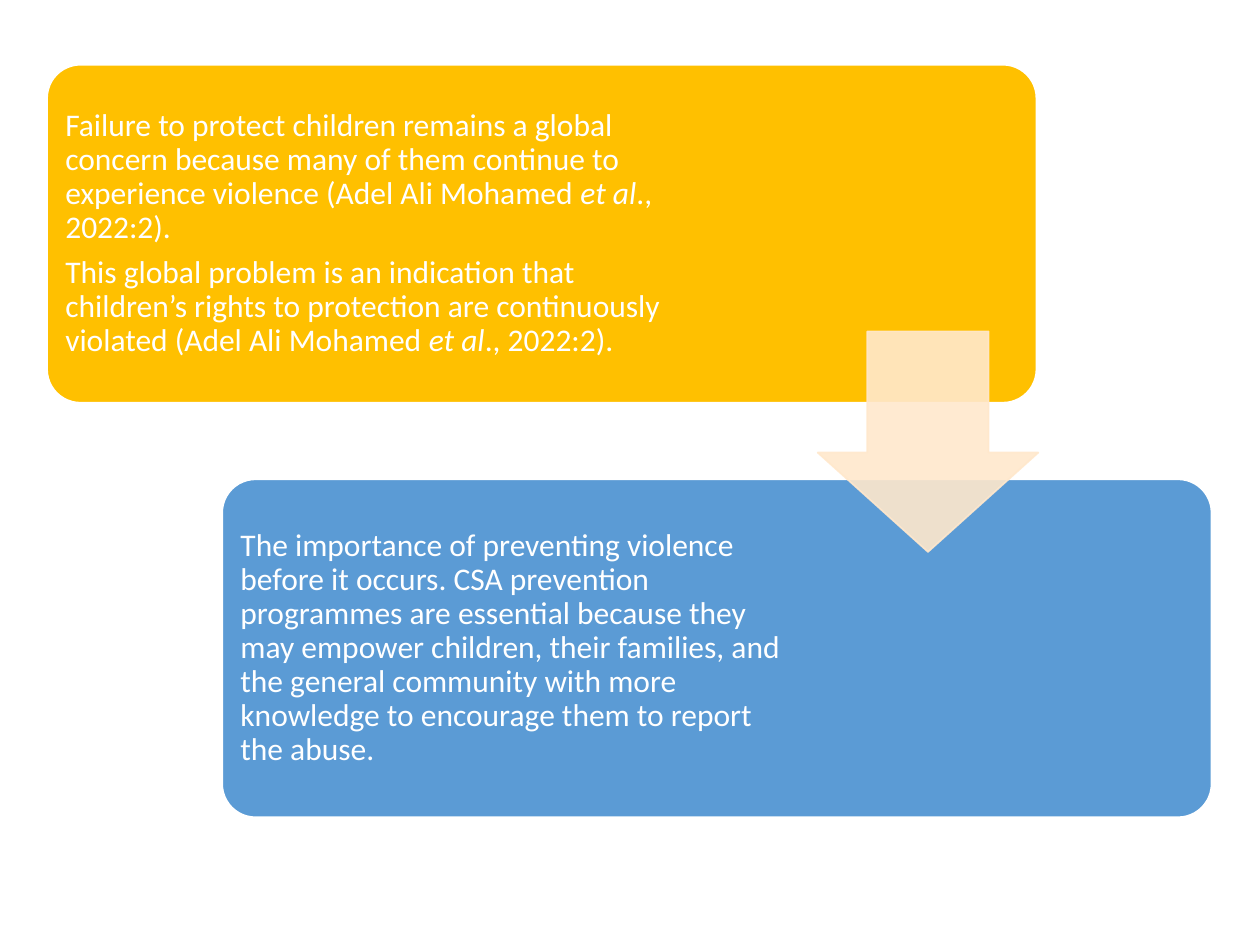
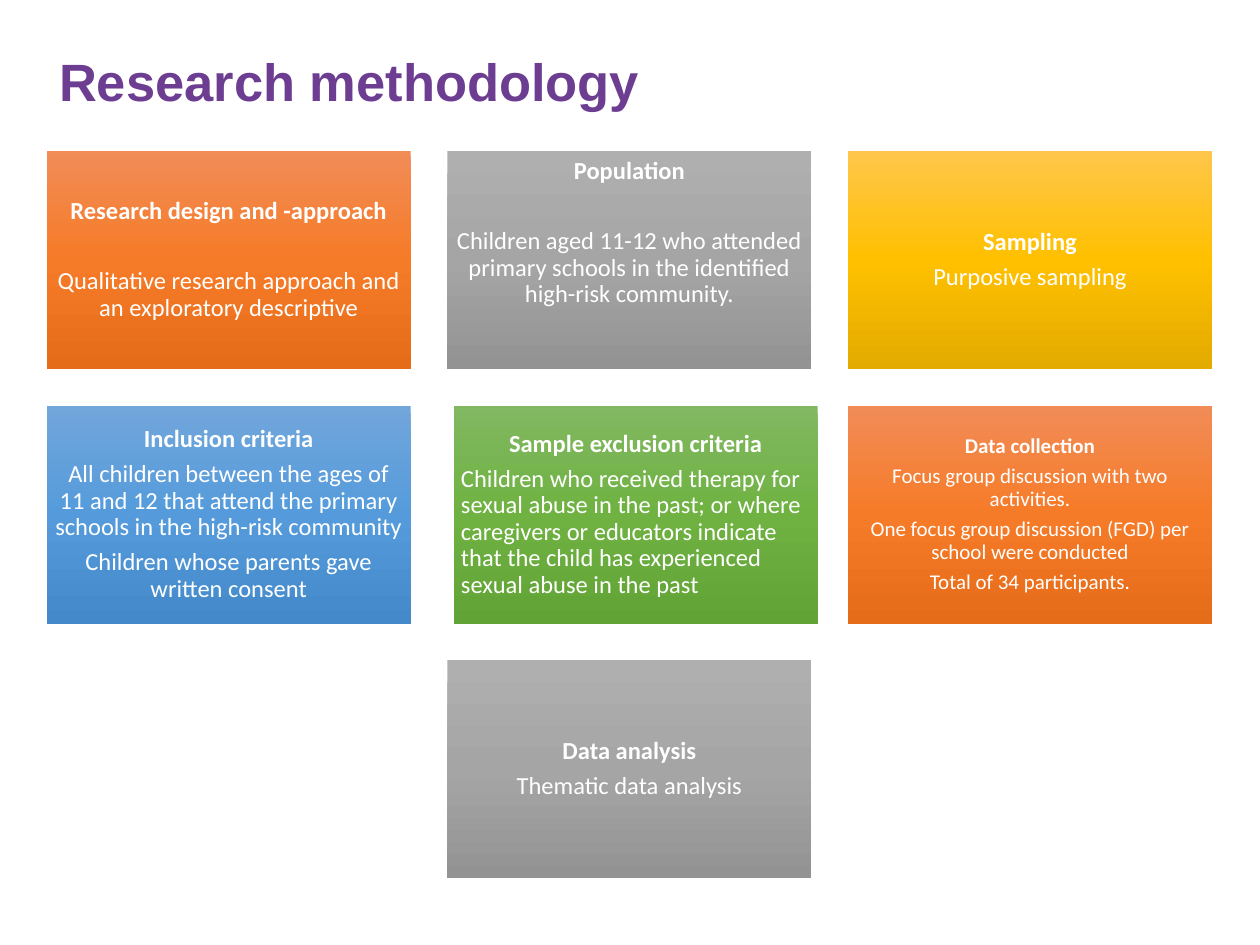
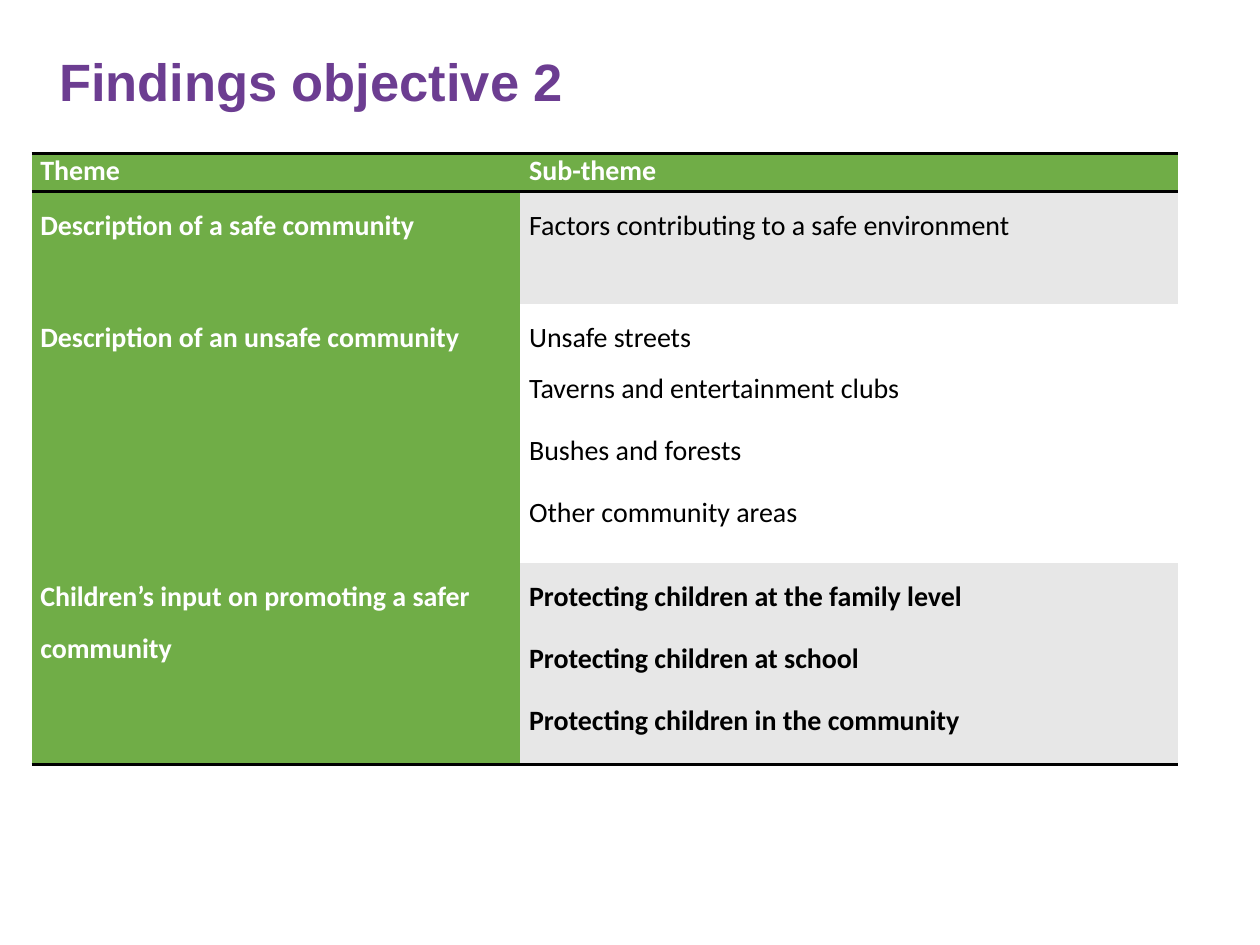
"""Build three slides on child protection research."""
from copy import deepcopy

from pptx import Presentation
from pptx.dml.color import RGBColor
from pptx.enum.shapes import MSO_SHAPE as Kind
from pptx.enum.text import MSO_ANCHOR as Anchor, PP_ALIGN as Align
from pptx.oxml.ns import qn
from pptx.oxml.xmlchemy import OxmlElement as Node
from pptx.util import Inches, Pt

WHITE = RGBColor(0xFF, 0xFF, 0xFF)
BLACK = RGBColor(0, 0, 0)
PURPLE = RGBColor(0x6C, 0x3D, 0x91)
GOLD = RGBColor(0xFF, 0xC0, 0x00)
BLUE = RGBColor(0x5B, 0x9B, 0xD5)
CREAM = RGBColor(0xFF, 0xE8, 0xCC)
GREEN = RGBColor(0x70, 0xAD, 0x47)
PALE = RGBColor(0xE7, 0xE7, 0xE7)

ORANGES = (RGBColor(0xF1, 0x8C, 0x57), RGBColor(0xF6, 0x7B, 0x28), RGBColor(0xE5, 0x6C, 0x19))
GREYS = (RGBColor(0xAF, 0xAF, 0xAF), RGBColor(0xA5, 0xA5, 0xA5), RGBColor(0x93, 0x93, 0x93))
GOLDS = (RGBColor(0xFF, 0xC6, 0x4B), GOLD, RGBColor(0xE3, 0xAB, 0x00))
BLUES = (RGBColor(0x71, 0xA6, 0xDB), RGBColor(0x55, 0x9B, 0xDB), RGBColor(0x44, 0x8A, 0xCA))
GREENS = (RGBColor(0x81, 0xB8, 0x61), RGBColor(0x6F, 0xB2, 0x42), RGBColor(0x62, 0xA3, 0x36))

PLAIN = "{2D5ABB26-0587-4C30-8999-92F81FD0307C}"
LEFT, TOP = 0.37, 1.2
TILE_W, TILE_H, STEP_X, STEP_Y = 2.89, 1.73, 3.18, 2.02

CONCERNS = [
    "Failure to protect children remains a global concern because many of them "
    "continue to experience violence (Adel Ali Mohamed *et al*., 2022:2).",
    "This global problem is an indication that children’s rights to protection are "
    "continuously violated (Adel Ali Mohamed *et al*., 2022:2).",
]
NEEDS = [
    "The importance of preventing violence before it occurs. CSA prevention programmes "
    "are essential because they may empower children, their families, and the general "
    "community with more knowledge to encourage them to report the abuse.",
]
TILES = [
    (0, 0, ORANGES, ["Research design and -approach",
                     "Qualitative research approach and an exploratory descriptive"],
     {"gap": 25}),
    (1, 0, GREYS, ["Population",
                   "Children aged 11-12 who attended primary schools in the identified "
                   "high-risk community."],
     {"gap": 25, "anchor": Anchor.TOP}),
    (2, 0, GOLDS, ["Sampling", "Purposive sampling"], {}),
    (0, 1, BLUES, ["Inclusion criteria",
                   "All children between the ages of 11 and 12 that attend the primary "
                   "schools in the high-risk community",
                   "Children whose parents gave written consent"], {}),
    (1, 1, GREENS, ["Sample exclusion criteria",
                    "Children who received therapy for sexual abuse in the past; or where "
                    "caregivers or educators indicate that the child has experienced "
                    "sexual abuse in the past"],
     {"align": Align.LEFT, "shift": 0.05}),
    (2, 1, ORANGES, ["Data collection",
                     "Focus group discussion with two activities.",
                     "One focus group discussion (FGD) per school were conducted",
                     "Total of 34 participants."],
     {"size": 12}),
    (1, 2, GREYS, ["Data analysis", "Thematic data analysis"], {}),
]
THEMES = [
    (0.3, "Theme", ["Sub-theme"], GREEN),
    (0.89, "Description of a safe community",
     ["Factors contributing to a safe environment"], PALE),
    (2.06, "Description of an unsafe community",
     ["Unsafe streets\nTaverns and entertainment clubs", "Bushes and forests",
      "Other community areas"], WHITE),
    (1.6, "Children’s input on promoting a safer community",
     ["Protecting children at the family level", "Protecting children at school",
      "Protecting children in the community"], PALE),
]


def apply(target, values):
    """Set each named attribute of the target."""
    for name, value in values.items():
        setattr(target, name, value)


def write(par, text, size, color=WHITE, bold=False, face="Calibri", **form):
    """Fill a paragraph, with text between asterisks in italics."""
    pieces = text.split("*")
    par.text = pieces[0]
    for i, piece in enumerate(pieces[1:], 1):
        run = par.add_run()
        run.text = piece
        run.font.italic = i % 2 == 1
    for run in par.runs:
        apply(run.font, {"name": face, "size": Pt(size), "bold": bold})
        run.font.color.rgb = color
    apply(par, form)


def lines(frame, texts):
    """Pair each text with a paragraph of the frame."""
    for i, text in enumerate(texts):
        yield i, frame.add_paragraph() if i else frame.paragraphs[0], text


def inset(frame, side, right=None, anchor=Anchor.MIDDLE):
    """Set wrap, anchor and margins of a text frame."""
    apply(frame, {"word_wrap": True, "vertical_anchor": anchor,
                  "margin_left": Inches(side), "margin_top": Inches(side),
                  "margin_right": Inches(side if right is None else right),
                  "margin_bottom": Inches(side)})


def block(slide, kind, x, y, w, h):
    """Add a preset shape without a shadow."""
    shape = slide.shapes.add_shape(kind, *map(Inches, (x, y, w, h)))
    shape.shadow.inherit = False
    return shape


def paint(shape, fill, line, width):
    """Give a shape a solid fill and an outline."""
    shape.fill.solid()
    shape.fill.fore_color.rgb = fill
    shape.line.color.rgb = line
    shape.line.width = Pt(width)


def title(slide, text):
    """Add the slide title."""
    box = slide.shapes.add_textbox(*map(Inches, (LEFT, 0.4, 9.25, 0.98)))
    box.text_frame.word_wrap = True
    write(box.text_frame.paragraphs[0], text, 30, PURPLE, True, "Arial", line_spacing=0.9)


def card(slide, x, y, fill, texts, right):
    """Add a rounded card with text on its left side."""
    shape = block(slide, Kind.ROUNDED_RECTANGLE, x, y, 7.86, 2.69)
    shape.adjustments[0] = 0.1
    paint(shape, fill, WHITE, 1.5)
    inset(shape.text_frame, 0.07, right)
    for _, par, text in lines(shape.text_frame, texts):
        write(par, text, 18, alignment=Align.LEFT, line_spacing=0.9, space_after=Pt(6.3))


def arrow(slide, x, y, side):
    """Add a see-through arrow that points down."""
    shape = block(slide, Kind.DOWN_ARROW, x, y, side, side)
    shape.adjustments[0] = 0.55
    shape.adjustments[1] = 0.45
    paint(shape, CREAM, CREAM, 1)
    for color in shape._element.spPr.iter(qn("a:srgbClr")):
        alpha = Node("a:alpha")
        alpha.set("val", "90000")
        color.append(alpha)


def blend(shape, colors):
    """Fill a shape with an even gradient from top to bottom."""
    shape.fill.gradient()
    shape.fill.gradient_angle = 270
    stops = shape._element.spPr.find(qn("a:gradFill")).find(qn("a:gsLst"))
    stops.append(deepcopy(stops[-1]))
    for i, (stop, color) in enumerate(zip(shape.fill.gradient_stops, colors)):
        stop.position = i / 2
        stop.color.rgb = color


def tile(slide, col, row, colors, texts, size=14, gap=None, align=Align.CENTER,
         anchor=Anchor.MIDDLE, shift=0):
    """Add a grid tile with a bold heading over its text."""
    shape = block(slide, Kind.RECTANGLE, LEFT + col * STEP_X + shift, TOP + row * STEP_Y,
                  TILE_W, TILE_H)
    blend(shape, colors)
    shape.line.fill.background()
    inset(shape.text_frame, size / 240, anchor=anchor)
    for i, par, text in lines(shape.text_frame, texts):
        after = gap if gap and i == 0 else size * 0.35
        write(par, text, size, bold=i == 0, alignment=align if i else Align.CENTER,
              line_spacing=0.9, space_after=Pt(after))


def rule(cell, tag):
    """Draw a black border on one side of a cell."""
    line, fill, color = Node(tag), Node("a:solidFill"), Node("a:srgbClr")
    line.set("w", str(Pt(2)))
    color.set("val", str(BLACK))
    fill.append(color)
    line.append(fill)
    cell._tc.get_or_add_tcPr().append(line)


def grid(slide, rows):
    """Add the table of themes."""
    table = slide.shapes.add_table(len(rows), 2, *map(Inches, (0.25, 1.22, 9.1, 4.85))).table
    table._tbl.tblPr.find(qn("a:tableStyleId")).text = PLAIN
    for col, width in zip(table.columns, (3.88, 5.22)):
        col.width = Inches(width)
    last = len(rows) - 1
    for r, (height, theme, subs, shade) in enumerate(rows):
        table.rows[r].height = Inches(height)
        for c, texts in enumerate(([theme], subs)):
            cell = table.cell(r, c)
            apply(cell, {"margin_left": Inches(0.07), "margin_right": Inches(0.07),
                         "margin_top": 0, "margin_bottom": 0})
            if r == 0:
                rule(cell, "a:lnT")
            if r in (0, last):
                rule(cell, "a:lnB")
            cell.fill.solid()
            cell.fill.fore_color.rgb = shade if c else GREEN
            body = r > 0 and c > 0
            for _, par, text in lines(cell.text_frame, texts):
                write(par, text, 16, BLACK if body else WHITE, not body or r == last,
                      line_spacing=1.5 if r else 1.0, space_after=Pt(6))


def main():
    """Build and save the slides."""
    deck = Presentation()
    deck.slide_width, deck.slide_height = Inches(10), Inches(7.5)
    why, method, finds = (deck.slides.add_slide(deck.slide_layouts[6]) for _ in range(3))

    card(why, LEFT, 0.51, GOLD, CONCERNS, 2.69)
    card(why, 1.76, 3.8, BLUE, NEEDS, 3.2)
    arrow(why, 6.49, 2.63, 1.75)

    title(method, "Research methodology")
    for col, row, colors, texts, extra in TILES:
        tile(method, col, row, colors, texts, **extra)

    title(finds, "Findings objective 2")
    grid(finds, THEMES)
    deck.save("out.pptx")


if __name__ == "__main__":
    main()
